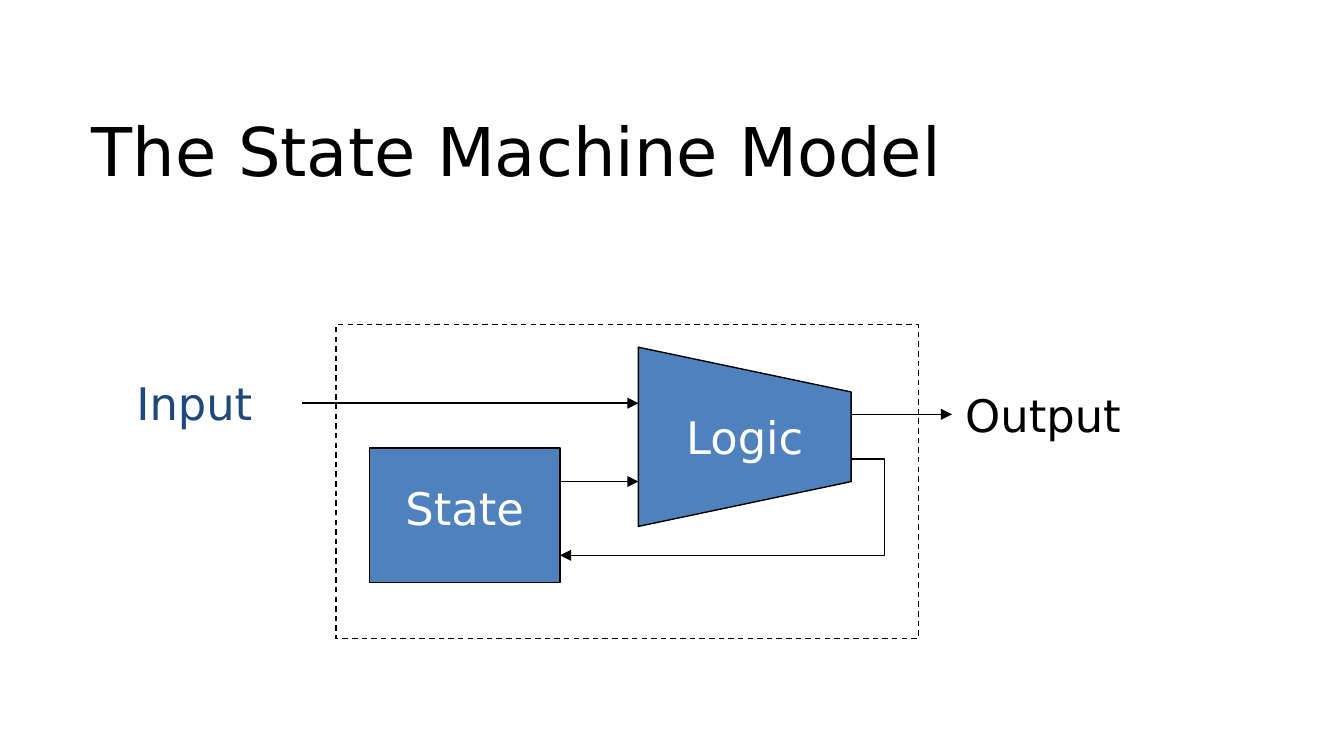
from lxml import etree
from pptx import Presentation
from pptx.dml.color import RGBColor
from pptx.enum.dml import MSO_LINE
from pptx.enum.shapes import MSO_CONNECTOR, MSO_SHAPE
from pptx.enum.text import MSO_ANCHOR, PP_ALIGN
from pptx.oxml.ns import qn
from pptx.util import Pt

BLACK = RGBColor(0x00, 0x00, 0x00)
WHITE = RGBColor(0xFF, 0xFF, 0xFF)
BLUE = RGBColor(0x4F, 0x81, 0xBD)
NAVY = RGBColor(0x1F, 0x49, 0x7D)
FONT = "DejaVu Sans"
LEFT, CENTER = PP_ALIGN.LEFT, PP_ALIGN.CENTER
TOP = MSO_ANCHOR.TOP
RECTANGLE = MSO_SHAPE.RECTANGLE
STRAIGHT, ELBOW = MSO_CONNECTOR.STRAIGHT, MSO_CONNECTOR.ELBOW
DASH = MSO_LINE.DASH
LINE_WIDTH = Pt(0.75)


def write(tf, text, size=24, color=BLACK, align=LEFT):
    tf.word_wrap = True
    tf.vertical_anchor = TOP
    p = tf.paragraphs[0]
    p.alignment = align
    r = p.add_run()
    r.text = text
    r.font.name = FONT
    r.font.size = Pt(size)
    r.font.color.rgb = color


def add_title(s, text):
    sp = s.shapes.title
    sp.left, sp.top, sp.width, sp.height = Pt(42), Pt(52.5), Pt(636), Pt(61)
    sp.text_frame.margin_top = Pt(6)
    write(sp.text_frame, text, size=36)


def add_label(s, text, x, y, w, **fmt):
    sp = s.shapes.add_textbox(Pt(x), Pt(y), Pt(w), Pt(36))
    write(sp.text_frame, text, **fmt)


def style(sp, fill=None):
    sp.shadow.inherit = False
    if fill is None:
        sp.fill.background()
    else:
        sp.fill.solid()
        sp.fill.fore_color.rgb = fill
    sp.line.color.rgb = BLACK
    sp.line.width = LINE_WIDTH


def add_box(s, x, y, w, h, fill=None):
    sp = s.shapes.add_shape(RECTANGLE, Pt(x), Pt(y), Pt(w), Pt(h))
    style(sp, fill)
    return sp


def add_polygon(s, points, fill):
    start, *rest = [(Pt(x), Pt(y)) for x, y in points]
    builder = s.shapes.build_freeform(*start)
    builder.add_line_segments(rest, close=True)
    style(builder.convert_to_shape(), fill)


def add_arrow(s, x1, y1, x2, y2, bend_x=None):
    """Draw an arrow; bend_x is where an elbow runs vertically."""
    kind = STRAIGHT if bend_x is None else ELBOW
    c = s.shapes.add_connector(kind, Pt(x1), Pt(y1), Pt(x2), Pt(y2))
    c.line.color.rgb = BLACK
    c.line.width = LINE_WIDTH
    sp_pr = c._element.spPr
    etree.SubElement(sp_pr.find(qn("a:ln")), qn("a:tailEnd"), type="triangle")
    etree.SubElement(sp_pr, qn("a:effectLst"))
    if bend_x is not None:
        adjust = round((bend_x - x1) / (x2 - x1) * 100000)
        av_lst = sp_pr.find(qn("a:prstGeom")).get_or_add_avLst()
        etree.SubElement(av_lst, qn("a:gd"), name="adj1", fmla=f"val {adjust}")


def main():
    prs = Presentation()
    prs.slide_width, prs.slide_height = Pt(720), Pt(405)
    s = prs.slides.add_slide(prs.slide_layouts[5])
    add_title(s, "The State Machine Model")

    add_polygon(s, [(342, 186), (456, 210), (456, 258), (342, 282)], BLUE)
    add_label(s, "Logic", 342, 216, 114, color=WHITE, align=CENTER)
    machine = add_box(s, 180, 174, 312, 168)
    machine.line.dash_style = DASH

    add_arrow(s, 300, 258, 342, 258)
    add_arrow(s, 456, 246, 300, 297.5, bend_x=474)
    add_label(s, "Input", 66, 198, 96, color=NAVY)
    add_label(s, "Output", 510, 204, 150)
    add_arrow(s, 162, 216, 342, 216)
    add_arrow(s, 456, 222, 510, 222)

    add_box(s, 198, 240, 102, 72, BLUE)
    add_label(s, "State", 198, 254, 102, color=WHITE, align=CENTER)
    prs.save("out.pptx")


if __name__ == "__main__":
    main()
